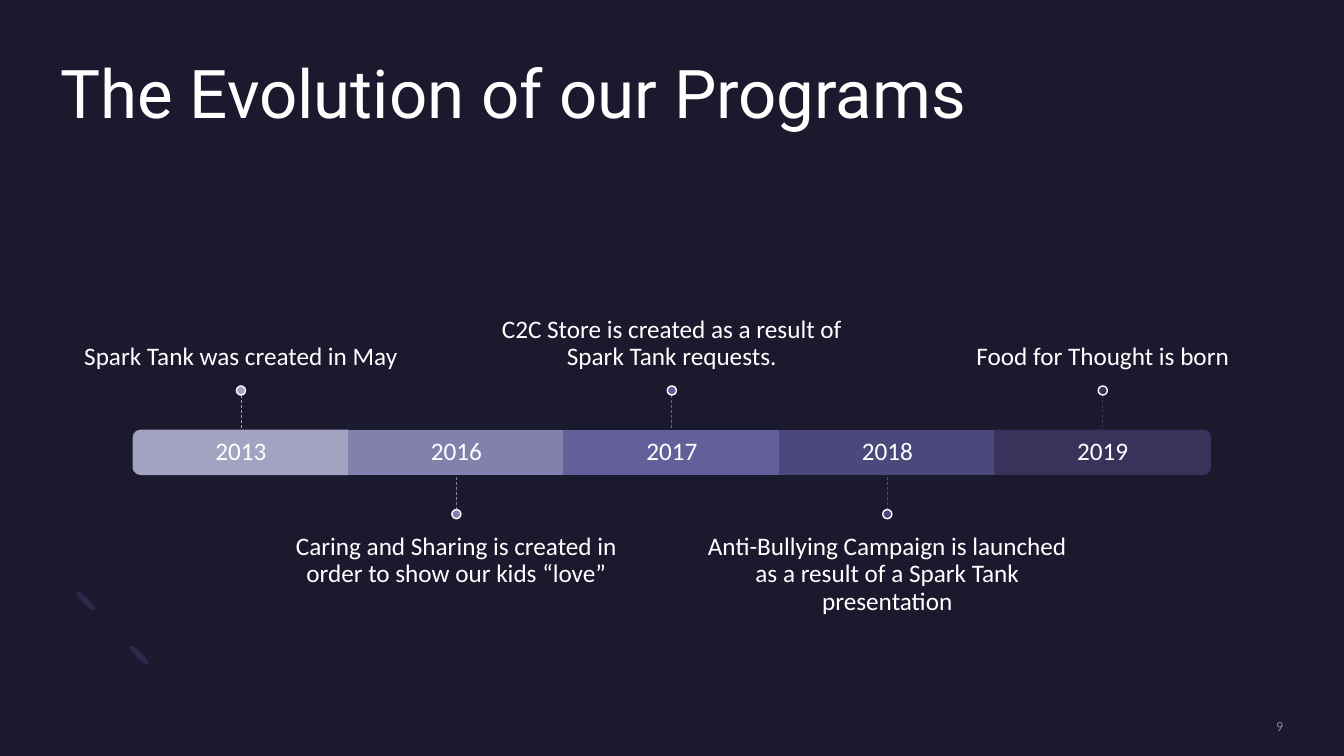
from dataclasses import dataclass

from pptx import Presentation
from pptx.dml.color import RGBColor
from pptx.enum.dml import MSO_LINE
from pptx.enum.shapes import MSO_CONNECTOR, MSO_SHAPE
from pptx.enum.text import MSO_ANCHOR, PP_ALIGN
from pptx.oxml.ns import qn
from pptx.util import Pt

DASH = MSO_LINE.DASH
STRAIGHT = MSO_CONNECTOR.STRAIGHT
OVAL, RECTANGLE = MSO_SHAPE.OVAL, MSO_SHAPE.RECTANGLE
ROUNDED_END = MSO_SHAPE.ROUND_2_SAME_RECTANGLE
TOP, MIDDLE, BOTTOM = MSO_ANCHOR.TOP, MSO_ANCHOR.MIDDLE, MSO_ANCHOR.BOTTOM
LEFT, CENTER, RIGHT = PP_ALIGN.LEFT, PP_ALIGN.CENTER, PP_ALIGN.RIGHT

WHITE, BACKGROUND = "FFFFFF", "1B192E"
BAR_LEFT, BAR_TOP, BAR_HEIGHT = 95.15, 307.4, 31.4
SEGMENT_WIDTH = 153.9
STEM_LENGTH, DOT_SIZE = 25.2, 6.5
CAPTION_WIDTH, CAPTION_HEIGHT = 257, 109.4
INSET = 10.8


@dataclass
class Milestone:
    year: str
    caption: str
    color: str


@dataclass
class TextStyle:
    size: float = 18
    font: str = "Calibri"
    color: str = WHITE
    align: PP_ALIGN = CENTER
    anchor: MSO_ANCHOR = MIDDLE
    insets: tuple = (0, 0, 0, 0)
    spacing: float = 0.9


MILESTONES = [
    Milestone("2013", "Spark Tank was created in May", "A3A3C1"),
    Milestone("2016", "Caring and Sharing is created in order to show our kids “love”", "8281AE"),
    Milestone("2017", "C2C Store is created as a result of Spark Tank requests.", "625F9A"),
    Milestone("2018", "Anti-Bullying Campaign is launched as a result of a Spark Tank presentation", "4C487B"),
    Milestone("2019", "Food for Thought is born", "37335B"),
]

# Crescent outline: start point, then cubic curves (three points) and lines (one point)
CRESCENT = [
    [(54.7, 474.5)],
    [(40.3, 460.1), (41.8, 435.6), (58.3, 419)],
    [(71.3, 432)],
    [(62.6, 439.9), (61.9, 452.9), (69.1, 459.4)],
    [(76.3, 466.6), (88.6, 465.8), (97.2, 457.9)],
    [(109.4, 470.9)],
    [(93.6, 486.7), (68.4, 488.9), (54.7, 474.5)],
]


def paint(target, color: str) -> None:
    target.solid()
    target.fore_color.rgb = RGBColor.from_string(color)


def fade(element, percent: float) -> None:
    for color in element.iter(qn("a:srgbClr")):
        alpha = color.makeelement(qn("a:alpha"), {"val": str(int(percent * 1000))})
        color.append(alpha)


def add_shape(page, kind, left: float, top: float, width: float, height: float,
              fill: str, line: str = "", rotation: float = 0):
    shape = page.shapes.add_shape(kind, Pt(left), Pt(top), Pt(width), Pt(height))
    shape.shadow.inherit = False
    shape.rotation = rotation
    paint(shape.fill, fill)
    if line:
        paint(shape.line.fill, line)
        shape.line.width = Pt(1)
    else:
        shape.line.fill.background()
    return shape


def add_text(page, text: str, left: float, top: float, width: float, height: float,
             style: TextStyle):
    box = page.shapes.add_textbox(Pt(left), Pt(top), Pt(width), Pt(height))
    frame = box.text_frame
    frame.word_wrap = True
    frame.vertical_anchor = style.anchor
    (frame.margin_left, frame.margin_top,
     frame.margin_right, frame.margin_bottom) = map(Pt, style.insets)
    frame.text = text
    para = frame.paragraphs[0]
    para.alignment = style.align
    para.line_spacing = style.spacing
    span = para.runs[0]
    span.font.size = Pt(style.size)
    span.font.name = style.font
    paint(span.font.fill, style.color)
    return box


def add_stem(page, x: float, start: float, end: float, color: str) -> None:
    stem = page.shapes.add_connector(STRAIGHT, Pt(x), Pt(start), Pt(x), Pt(end))
    paint(stem.line.fill, color)
    stem.line.width = Pt(0.5)
    stem.line.dash_style = DASH
    properties = stem.element.spPr
    properties.append(properties.makeelement(qn("a:effectLst"), {}))


def curve_points(start: tuple, curve: list, steps: int = 12) -> list:
    controls = [start, *curve]
    points = []
    for step in range(1, steps + 1):
        t = step / steps
        weights = ((1 - t) ** 3, 3 * t * (1 - t) ** 2, 3 * t * t * (1 - t), t ** 3)
        points.append(tuple(sum(w * c[axis] for w, c in zip(weights, controls))
                            for axis in (0, 1)))
    return points


def add_decoration(page) -> None:
    for left, top in ((97.2, 458.6), (59, 419.8)):
        add_shape(page, OVAL, left, top, 4.3, 18.7, "2C284A", rotation=135)
    outline = list(CRESCENT[0])
    for piece in CRESCENT[1:]:
        outline += curve_points(outline[-1], piece) if len(piece) == 3 else piece
    points = [(Pt(x), Pt(y)) for x, y in outline]
    builder = page.shapes.build_freeform(*points[0])
    builder.add_line_segments(points[1:], close=True)
    crescent = builder.convert_to_shape()
    crescent.shadow.inherit = False
    crescent.line.fill.background()
    paint(crescent.fill, "7771B2")
    fade(crescent.element, 2)


def add_segment(page, index: int, color: str) -> None:
    left = BAR_LEFT + index * SEGMENT_WIDTH
    rotation = {0: 270, len(MILESTONES) - 1: 90}.get(index)
    if rotation is None:
        add_shape(page, RECTANGLE, left, BAR_TOP, SEGMENT_WIDTH, BAR_HEIGHT, color, color)
    else:
        # An upright shape turned on its side about the segment's centre
        shift = (SEGMENT_WIDTH - BAR_HEIGHT) / 2
        add_shape(page, ROUNDED_END, left + shift, BAR_TOP - shift,
                  BAR_HEIGHT, SEGMENT_WIDTH, color, color, rotation)


def add_milestone(page, index: int, milestone: Milestone) -> None:
    left = BAR_LEFT + index * SEGMENT_WIDTH
    center = left + SEGMENT_WIDTH / 2
    add_segment(page, index, milestone.color)
    add_text(page, milestone.year, left, BAR_TOP, SEGMENT_WIDTH, BAR_HEIGHT,
             TextStyle(insets=(INSET,) * 4))

    # Captions alternate above and below the bar
    if index % 2 == 0:
        edge = BAR_TOP
        tip = edge - STEM_LENGTH
        dot_top = tip - DOT_SIZE
        caption_top = dot_top - CAPTION_HEIGHT
        style = TextStyle(anchor=BOTTOM, insets=(0, 0, 0, INSET))
    else:
        edge = BAR_TOP + BAR_HEIGHT
        tip = edge + STEM_LENGTH
        dot_top = tip
        caption_top = tip + DOT_SIZE
        style = TextStyle(anchor=TOP, insets=(0, INSET, 0, 0))
    add_text(page, milestone.caption, center - CAPTION_WIDTH / 2, caption_top,
             CAPTION_WIDTH, CAPTION_HEIGHT, style)
    add_stem(page, center, tip, edge, milestone.color)
    add_shape(page, OVAL, center - DOT_SIZE / 2, dot_top, DOT_SIZE, DOT_SIZE,
              milestone.color, WHITE)


def main() -> None:
    deck = Presentation()
    deck.slide_width, deck.slide_height = Pt(960), Pt(540)
    page = deck.slides.add_slide(deck.slide_layouts[6])
    paint(page.background.fill, BACKGROUND)
    add_decoration(page)

    # Title
    add_text(page, "The Evolution of our Programs", 43.2, 43.2, 873.4, 105,
             TextStyle(size=48, font="Roboto", align=LEFT, anchor=TOP))

    # Timeline
    for index, milestone in enumerate(MILESTONES):
        add_milestone(page, index, milestone)

    # Page number
    number = add_text(page, "9", 783.4, 512.6, 133.2, 12.2,
                      TextStyle(size=10, color="A6A6A6", align=RIGHT, spacing=1.0))
    fade(number.element, 80)
    deck.save("out.pptx")


if __name__ == "__main__":
    main()
